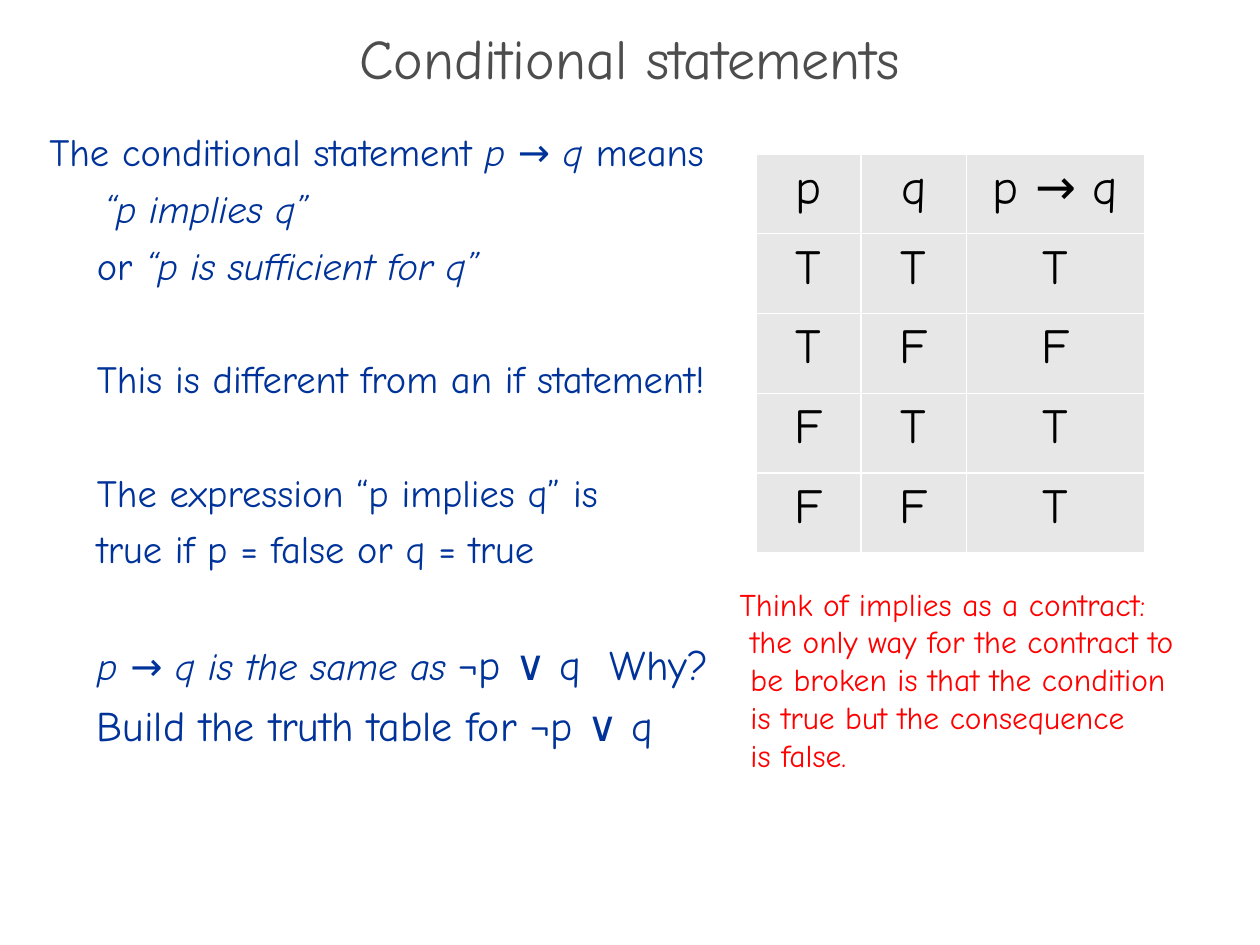
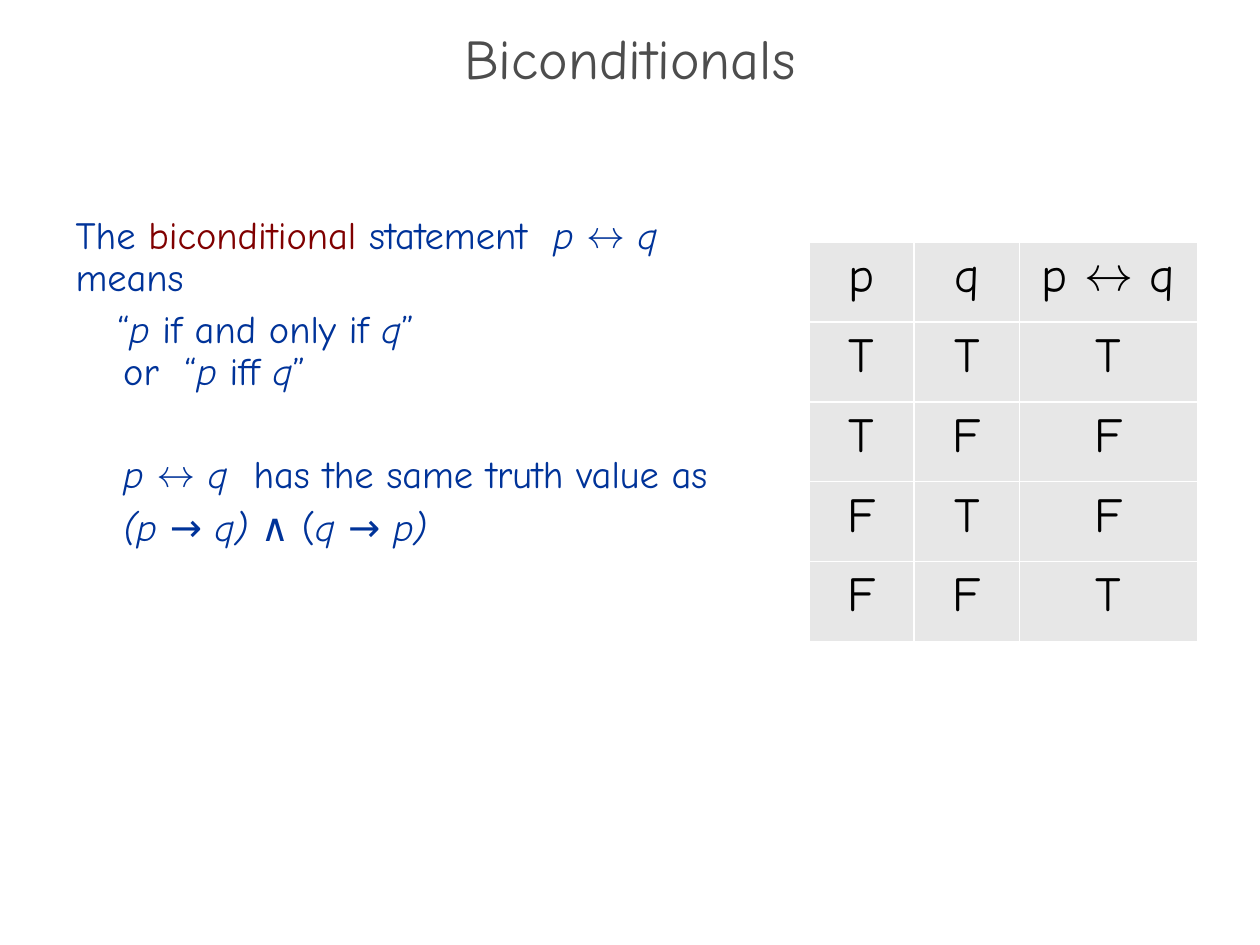
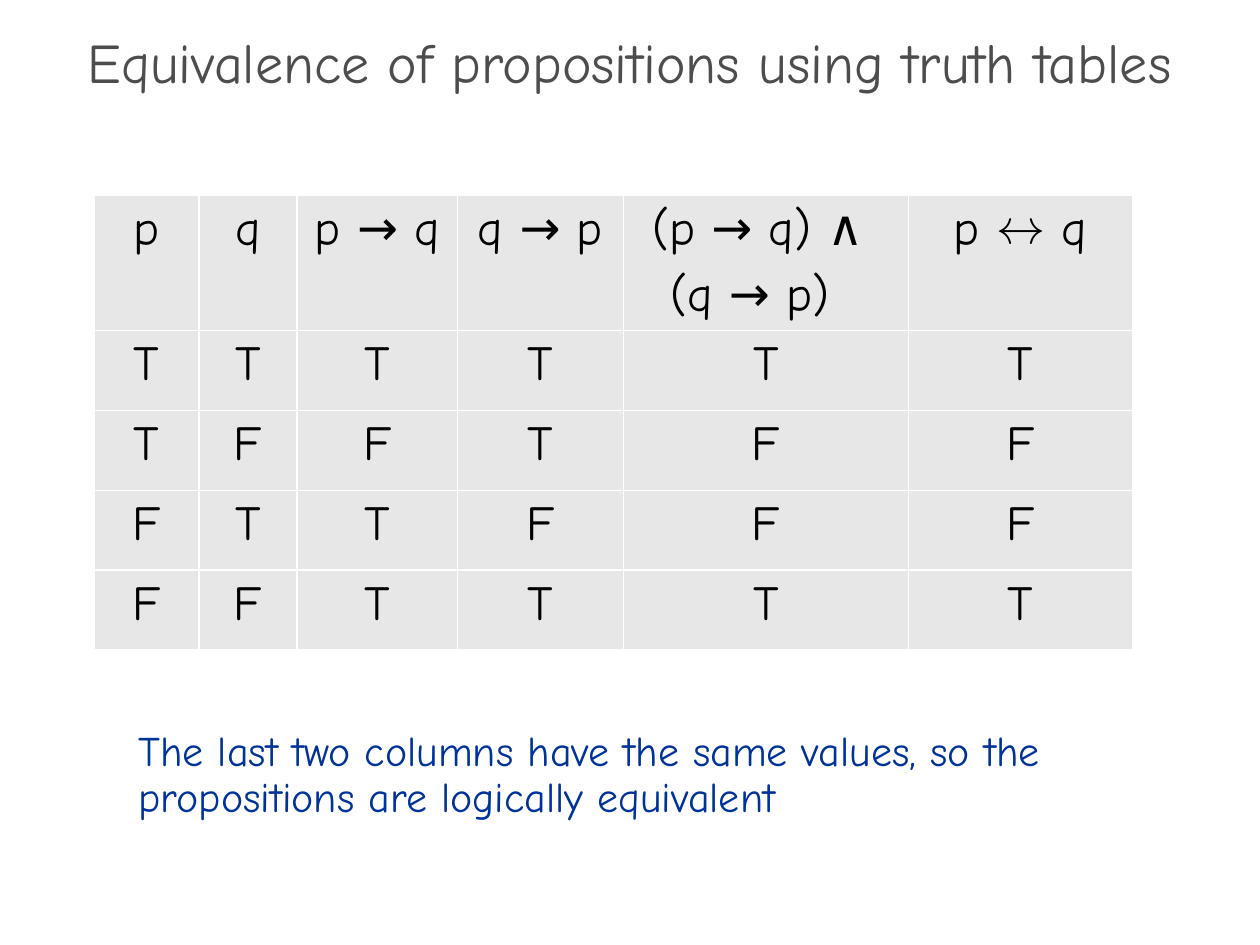
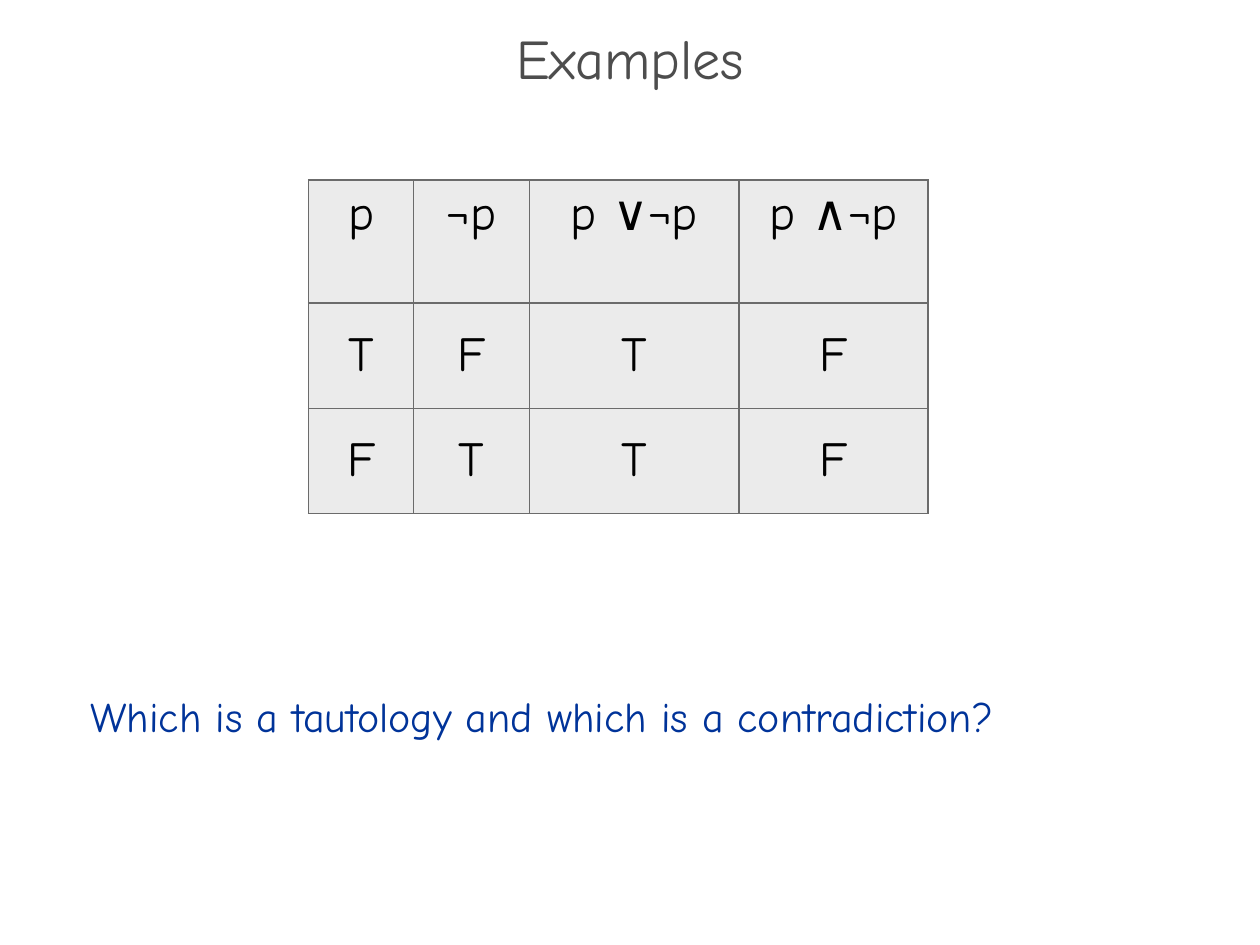
import pptx
import pptx.dml.color
import pptx.enum.text
import pptx.oxml
import pptx.oxml.ns
import pptx.util
from pptx.util import Cm, Pt

FONT = "Comic Neue"
GREY, BLUE, MAROON, RED, BLACK, WHITE = "4D4D4D", "003399", "800000", "FF0000", "000000", "FFFFFF"
CELL_GREY, LIGHT_GREY, LINE_GREY = "E7E7E7", "EBEBEB", "6B6B6B"
TITLE_BOX = (0, 0.69, 25.4, 1.27)
INDENT = 0.96
ROW_HEIGHT = 1.61
PAIR_COLUMNS = (2.12, 2.12, 3.59)
CENTER = pptx.enum.text.PP_ALIGN.CENTER
MIDDLE = pptx.enum.text.MSO_ANCHOR.MIDDLE
TOP = pptx.enum.text.MSO_ANCHOR.TOP


def rgb(value):
    """Turn a hex string into a colour."""
    return pptx.dml.color.RGBColor.from_string(value)


def add_run(paragraph, text, size, color, italic):
    """Add one formatted run to a paragraph."""
    run = paragraph.add_run()
    run.text = text
    run.font.name, run.font.size = FONT, Pt(size)
    run.font.italic, run.font.bold = italic, False
    run.font.color.rgb = rgb(color)


def write(paragraph, text, size=22, color=BLUE, accent=MAROON, align=None,
          spacing=None, before=0, after=0, left=0, first=0):
    """Write text where * toggles italics, | the accent colour, and a newline breaks the line."""
    paragraph.alignment, paragraph.line_spacing = align, spacing
    paragraph.space_before, paragraph.space_after = Pt(before), Pt(after)
    properties = paragraph._p.get_or_add_pPr()
    properties.set("marL", str(Cm(left)))
    properties.set("indent", str(Cm(first)))
    properties.append(pptx.oxml.parse_xml(f'<a:buNone {pptx.oxml.ns.nsdecls("a")}/>'))
    for slant, slanted in enumerate(text.split("*")):
        for tone, toned in enumerate(slanted.split("|")):
            for number, part in enumerate(toned.split("\n")):
                if number:
                    paragraph.add_line_break()
                if part:
                    add_run(paragraph, part, size, accent if tone % 2 else color, slant % 2 == 1)


def fill_frame(frame, lines, **shared):
    """Write (text, format) lines as the paragraphs of a text frame."""
    frame.word_wrap = True
    frame.auto_size = pptx.enum.text.MSO_AUTO_SIZE.NONE
    for number, (text, own) in enumerate(lines):
        paragraph = frame.add_paragraph() if number else frame.paragraphs[0]
        write(paragraph, text, **{**shared, **own})


def place(shape, box):
    """Move a shape to a box given in centimetres."""
    shape.left, shape.top, shape.width, shape.height = map(Cm, box)


def add_slide(presentation, title, layout=1, spacing=0.7):
    """Add a slide with the shared title style."""
    slide = presentation.slides.add_slide(presentation.slide_layouts[layout])
    shape = slide.shapes.title
    place(shape, TITLE_BOX)
    shape.text_frame.vertical_anchor = MIDDLE
    fill_frame(shape.text_frame, [(title, {})], size=32, color=GREY, align=CENTER, spacing=spacing)
    return slide


def add_body(slide, box, lines, **shared):
    """Fill the body placeholder with lines."""
    body = slide.placeholders[1]
    place(body, box)
    fill_frame(body.text_frame, lines, after=6, **shared)


def add_note(slide, box, lines, **shared):
    """Add a text box with lines."""
    note = slide.shapes.add_textbox(*map(Cm, box))
    fill_frame(note.text_frame, lines, **shared)


def style_cell(cell, fill, border):
    """Give a cell four equal borders and a solid fill."""
    properties = cell._tc.get_or_add_tcPr()
    for side in ("lnL", "lnR", "lnT", "lnB"):
        properties.append(pptx.oxml.parse_xml(
            f'<a:{side} {pptx.oxml.ns.nsdecls("a")} w="12700"><a:solidFill>'
            f'<a:srgbClr val="{border}"/></a:solidFill></a:{side}>'))
    cell.fill.solid()
    cell.fill.fore_color.rgb = rgb(fill)


def add_truth_table(slide, left, top, headers, values, columns, header_height=ROW_HEIGHT,
                    row_height=ROW_HEIGHT, fill=CELL_GREY, border=WHITE, anchor=TOP):
    """Add a truth table whose value rows are strings of T and F."""
    rows = [headers, *values]
    heights = [header_height] + [row_height] * len(values)
    frame = slide.shapes.add_table(len(rows), len(columns), Cm(left), Cm(top),
                                   Cm(sum(columns)), Cm(sum(heights)))
    table = frame.table
    table.first_row = table.horz_banding = False
    for column, width in zip(table.columns, columns):
        column.width = Cm(width)
    for number, (row, height, texts) in enumerate(zip(table.rows, heights, rows)):
        row.height = Cm(height)
        for cell, text in zip(row.cells, texts):
            style_cell(cell, fill, border)
            cell.vertical_anchor = anchor if number else TOP
            for index, line in enumerate(text.split("\n")):
                paragraph = cell.text_frame.add_paragraph() if index else cell.text_frame.paragraphs[0]
                write(paragraph, line, size=28, color=BLACK, align=CENTER, before=5.6)


def build_conditionals(presentation):
    """Slide on p → q."""
    slide = add_slide(presentation, "Conditional statements")
    indented = {"left": INDENT}
    separated = {"left": INDENT, "before": 32.4}
    add_body(slide, (0.74, 2.46, 13.94, 16.08), [
        ("The conditional statement *p *→ *q* means", {}),
        ("*“p implies q”*", {"left": 1.1}),
        ("or *“p is sufficient for q”*", indented),
        ("This is different from an if statement!", separated),
        ("The expression “p implies q” is", separated),
        ("true if p = false or q = true", indented),
    ])
    body = slide.placeholders[1].text_frame
    equivalence = body.add_paragraph()
    write(equivalence, "*p *→ *q is the same as *", after=6, **separated)
    add_run(equivalence, "¬p ∨ q  Why?", 24, BLUE, False)
    write(body.add_paragraph(), "Build the truth table for ¬p ∨ q", size=24, after=6, **indented)
    add_truth_table(slide, 15.24, 3.1, ["p", "q", "p → q"],
                    ["TTT", "TFF", "FTT", "FFT"], PAIR_COLUMNS)
    contract = ["the only way for the contract to", "be broken is that the condition",
                "is true but the consequence", "is false."]
    add_note(slide, (14.66, 11.66, 10.67, 4.78),
             [("Think of implies as a contract:", {})] + [(text, {"left": 0.22}) for text in contract],
             size=18, color=RED)


def build_biconditionals(presentation):
    """Slide on p ↔ q."""
    slide = add_slide(presentation, "Biconditionals")
    add_body(slide, (1.27, 4.24, 14.17, 12.5), [
        ("The |biconditional |statement  *p *↔ *q * means", {}),
        ("“*p* if and only if *q*” \nor  “*p *iff *q*”", {"left": INDENT, "first": -0.12}),
        ("*p *↔ *q  *has the same truth value as", {"left": INDENT, "before": 29.6}),
        ("*(p *→ *q) *∧ (*q *→ *p)*", {"left": INDENT}),
    ], spacing=0.9)
    add_truth_table(slide, 16.31, 4.88, ["p", "q", "p ↔ q"],
                    ["TTT", "TFF", "FTF", "FFT"], PAIR_COLUMNS)


def build_equivalence(presentation):
    """Slide comparing both sides of the equivalence."""
    slide = add_slide(presentation, "Equivalence of propositions using truth tables", 5, 0.9)
    headers = ["p", "q", "p → q ", "q → p ", "(p → q) ∧ \n(q → p)  ", "p ↔ q"]
    add_truth_table(slide, 1.9, 3.94, headers, ["TTTTTT", "TFFTFF", "FTTFFF", "FFTTTT"],
                    (2.11, 1.98, 3.23, 3.35, 5.74, 4.52), header_height=2.7)
    add_note(slide, (2.54, 14.6, 20.75, 2.11), [
        ("The last two columns have the same values, so the propositions are logically equivalent", {}),
    ], size=24, spacing=0.9)


def build_examples(presentation):
    """Slide asking for the tautology and the contradiction."""
    slide = add_slide(presentation, "Examples")
    add_body(slide, (1.57, 13.79, 23.5, 2.64),
             [("Which is a tautology and which is a contradiction?", {})], size=24)
    add_truth_table(slide, 6.22, 3.63, ["p", "¬p", "p ∨¬p", "p ∧¬p"], ["TFTF", "FTTF"],
                    (2.12, 2.33, 4.23, 3.81), header_height=2.48, row_height=2.12,
                    fill=LIGHT_GREY, border=LINE_GREY, anchor=MIDDLE)


def main():
    """Build and save the presentation."""
    presentation = pptx.Presentation()
    presentation.slide_width, presentation.slide_height = Cm(25.4), Cm(19.05)
    for build in (build_conditionals, build_biconditionals, build_equivalence, build_examples):
        build(presentation)
    presentation.save("out.pptx")


if __name__ == "__main__":
    main()
